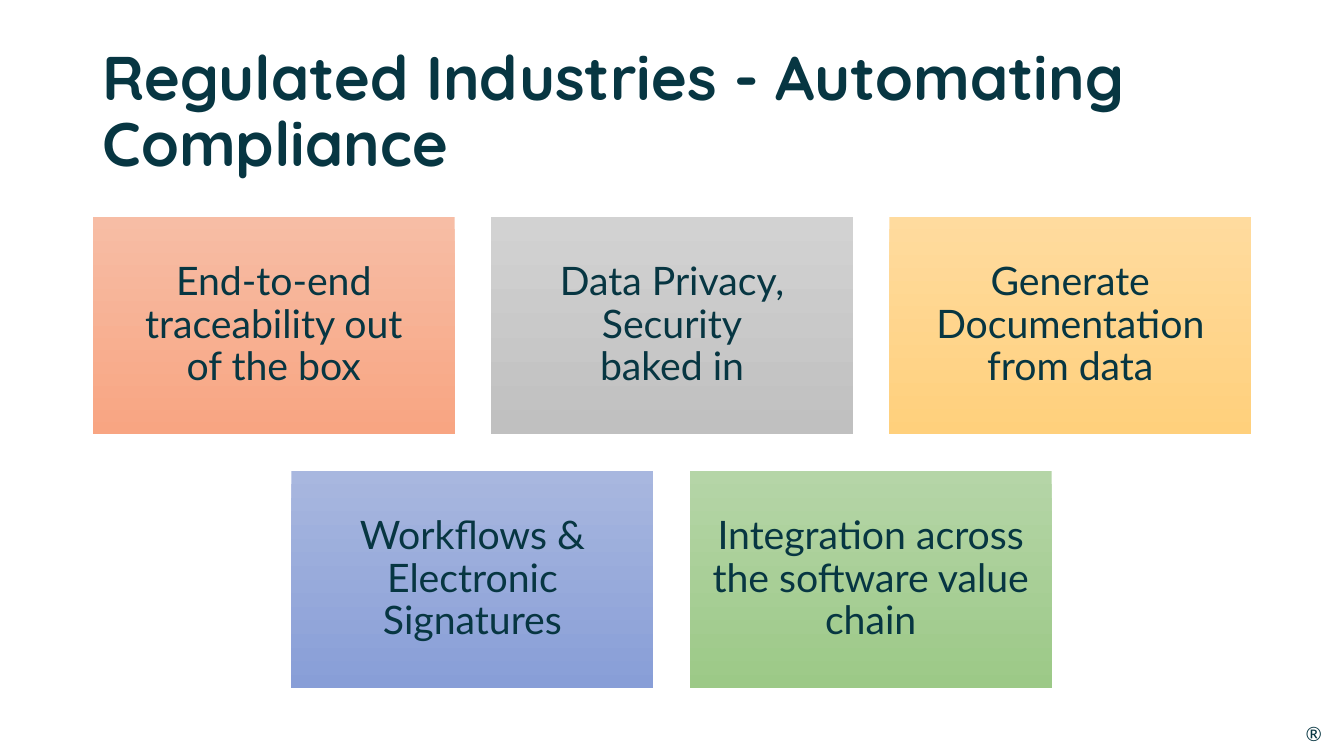
import pptx
import pptx.util
import pptx.dml.color
import pptx.enum.shapes
import pptx.enum.text

Inches = pptx.util.Inches
Pt = pptx.util.Pt
RGB = pptx.dml.color.RGBColor.from_string
Align = pptx.enum.text.PP_ALIGN
Anchor = pptx.enum.text.MSO_ANCHOR

colors = {
    "ink": "073642",
    "coral": ("F7BDA5", "F8A582"),
    "gray": ("D2D2D2", "C0C0C0"),
    "gold": ("FFDB9E", "FFD07C"),
    "blue": ("A8B7DF", "889ED7"),
    "green": ("B5D5A7", "9CC987"),
}


def write(shape, text, inset, align, space, style):
    frame = shape.text_frame
    sides = {"margin_" + side: Inches(gap) for side, gap in
             zip(("left", "right", "top", "bottom"), inset)}
    for key, value in {"word_wrap": True, "vertical_anchor": Anchor.MIDDLE, **sides}.items():
        setattr(frame, key, value)
    para = frame.paragraphs[0]
    para.text = text
    para.alignment = align
    para.line_spacing = space
    for run in para.runs:
        for key, value in style.items():
            setattr(run.font, key, value)
        run.font.color.rgb = RGB(colors["ink"])


deck = pptx.Presentation()
deck.slide_width = Inches(13.33)
deck.slide_height = Inches(7.5)
slide = deck.slides.add_slide(deck.slide_layouts[6])

mark = slide.shapes.add_textbox(Inches(12.95), Inches(7.16), Inches(0.18), Inches(0.24))
write(mark, "®", (0, 0, 0, 0), Align.LEFT, 1.0, {"name": "Lato", "size": Pt(14)})
mark.text_frame.word_wrap = False

title = slide.shapes.add_textbox(Inches(0.92), Inches(0.4), Inches(11.5), Inches(1.45))
write(title, "Regulated Industries - Automating Compliance", (0.1, 0.1, 0.05, 0.05),
      Align.LEFT, 0.9, {"name": "Quicksand", "size": Pt(44), "bold": True})

rows = [
    (0.92, 2.15, [
        ("coral", "End-to-end traceability out\vof the box"),
        ("gray", "Data Privacy, Security\vbaked in"),
        ("gold", "Generate Documentation from data"),
    ]),
    (2.89, 4.67, [
        ("blue", "Workflows & Electronic Signatures"),
        ("green", "Integration across the software value chain"),
    ]),
]
wide, high, step = 3.59, 2.16, 3.95

for left, top, cards in rows:
    for col, (tone, text) in enumerate(cards):
        card = slide.shapes.add_shape(
            pptx.enum.shapes.MSO_SHAPE.RECTANGLE,
            Inches(left + col * step), Inches(top), Inches(wide), Inches(high))
        card.shadow.inherit = False
        card.line.fill.background()
        card.fill.gradient()
        card.fill.gradient_angle = 270
        for stop, shade in zip(card.fill.gradient_stops, colors[tone]):
            stop.color.rgb = RGB(shade)
        write(card, text, (0.12,) * 4, Align.CENTER, 0.9, {"name": "Lato", "size": Pt(28)})

deck.save("out.pptx")
